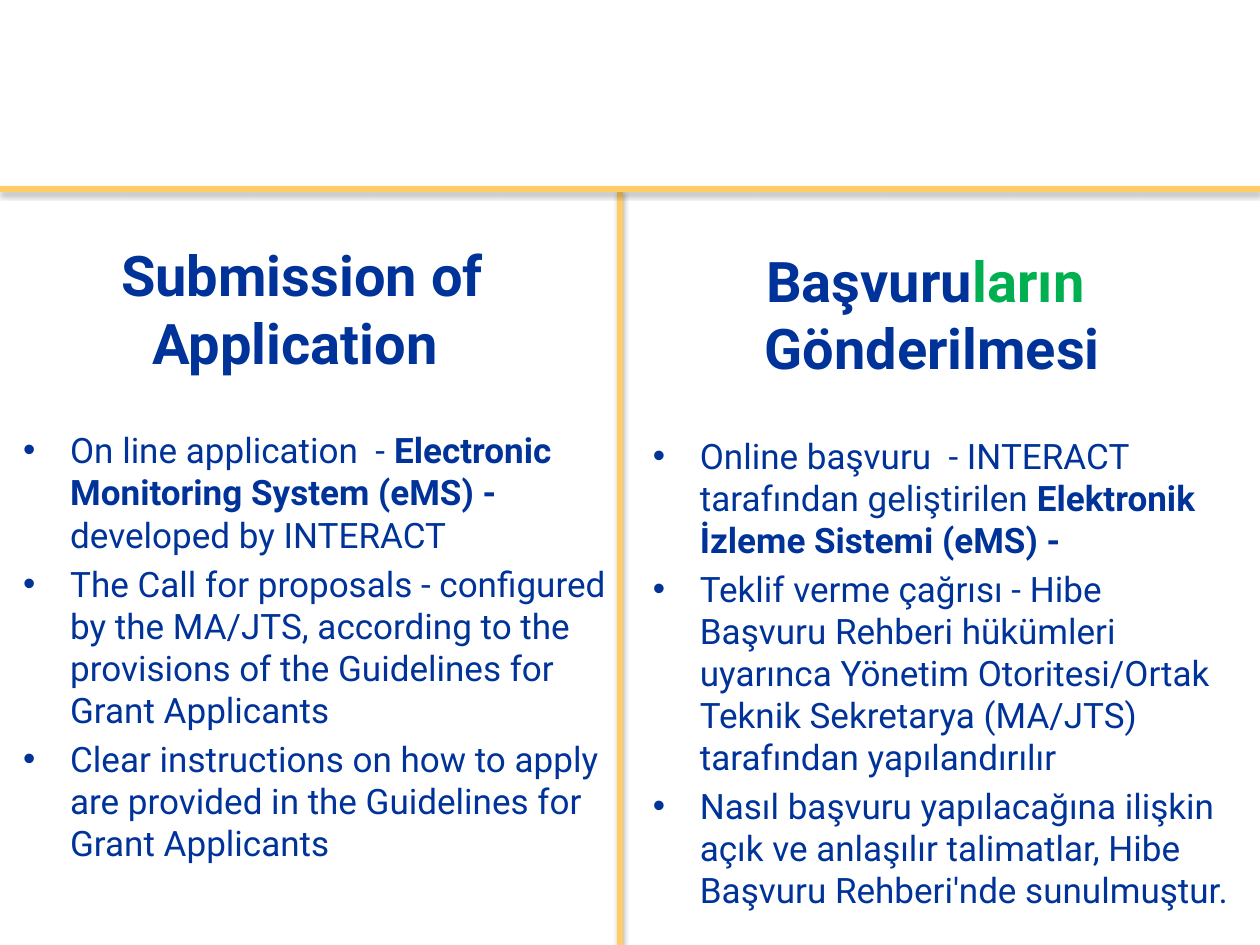
from lxml.etree import SubElement
from pptx import Presentation
from pptx.dml.color import RGBColor
from pptx.enum.shapes import MSO_CONNECTOR
from pptx.enum.text import MSO_ANCHOR, MSO_AUTO_SIZE, PP_ALIGN
from pptx.oxml.ns import qn
from pptx.util import Cm, Pt

COLORS = {"text": "003399", "accent": "00B050", "rule": "FFCC66", "shadow": "000000"}
FONT = "Roboto"
SLIDE_WIDTH, SLIDE_HEIGHT = Cm(25.4), Cm(19.05)
RULE_TOP, DIVIDER_LEFT = Cm(3.81), Cm(12.5)
COLUMN_WIDTH = Cm(12.35)

# Each run is (text, bold, color name)
ENGLISH_HEADING = [[("Submission of Application ", True, "text")]]
ENGLISH_POINTS = [
    [
        ("On line application  - ", False, "text"),
        ("Electronic Monitoring System (eMS) - ", True, "text"),
        ("developed by INTERACT", False, "text"),
    ],
    [("The Call for proposals - configured by the MA/JTS, according to the "
      "provisions of the Guidelines for Grant Applicants", False, "text")],
    [("Clear instructions on how to apply are provided in the Guidelines for "
      "Grant Applicants", False, "text")],
]
TURKISH_HEADING = [
    [("Başvuru", True, "text"), ("ların ", True, "accent")],
    [("Gönderilmesi", True, "text")],
]
TURKISH_POINTS = [
    [
        ("Online başvuru  - INTERACT tarafından geliştirilen ", False, "text"),
        ("Elektronik İzleme Sistemi (eMS) -", True, "text"),
    ],
    [("Teklif verme çağrısı - Hibe Başvuru Rehberi hükümleri uyarınca Yönetim "
      "Otoritesi/Ortak Teknik Sekretarya (MA/JTS) tarafından yapılandırılır",
      False, "text")],
    [("Nasıl başvuru yapılacağına ilişkin açık ve anlaşılır talimatlar, Hibe "
      "Başvuru Rehberi'nde sunulmuştur.", False, "text")],
]


def place(shape, left, top, width, height):
    shape.left, shape.top, shape.width, shape.height = left, top, width, height


def add_bullet(paragraph):
    properties = paragraph._p.get_or_add_pPr()
    properties.set("marL", str(Cm(0.95)))
    properties.set("indent", str(-Cm(0.95)))
    SubElement(properties, qn("a:buFont"), typeface="Arial")
    SubElement(properties, qn("a:buChar"), char="•")


def fill_text(shape, paragraphs, size, anchor, alignment, bulleted=False):
    text_frame = shape.text_frame
    text_frame.word_wrap = True
    text_frame.auto_size = MSO_AUTO_SIZE.NONE
    text_frame.vertical_anchor = anchor
    for index, runs in enumerate(paragraphs):
        paragraph = text_frame.add_paragraph() if index else text_frame.paragraphs[0]
        paragraph.alignment = alignment
        paragraph.space_before = Pt(4) if bulleted and index else Pt(0)
        if bulleted:
            add_bullet(paragraph)
        for text, bold, color in runs:
            run = paragraph.add_run()
            run.text = text
            run.font.name = FONT
            run.font.size = Pt(size)
            run.font.bold = bold
            run.font.color.rgb = RGBColor.from_string(COLORS[color])


def build_column(heading_shape, list_shape, left, top, heading, points):
    """Place a heading and its bulleted list relative to the column corner."""
    place(heading_shape, left, top, COLUMN_WIDTH, Cm(2.1))
    fill_text(heading_shape, heading, 32, MSO_ANCHOR.MIDDLE, PP_ALIGN.CENTER)
    place(list_shape, left + Cm(0.29), top + Cm(3.36), Cm(12.27), Cm(10.87))
    fill_text(list_shape, points, 20, MSO_ANCHOR.TOP, PP_ALIGN.LEFT, bulleted=True)


def add_rule(slide, start_x, start_y, end_x, end_y):
    rule = slide.shapes.add_connector(
        MSO_CONNECTOR.STRAIGHT, start_x, start_y, end_x, end_y)
    rule.line.color.rgb = RGBColor.from_string(COLORS["rule"])
    rule.line.width = Pt(3)
    # Soft shadow straight below the rule
    effects = SubElement(rule._element.spPr, qn("a:effectLst"))
    shadow = SubElement(effects, qn("a:outerShdw"), blurRad=str(Pt(3.1)),
                        dist=str(Pt(1.8)), dir="5400000", rotWithShape="0")
    color = SubElement(shadow, qn("a:srgbClr"), val=COLORS["shadow"])
    SubElement(color, qn("a:alpha"), val="35000")


def build_slide(presentation):
    slide = presentation.slides.add_slide(presentation.slide_layouts[1])
    shapes = slide.shapes

    # English column in the template's placeholders
    build_column(shapes.title, slide.placeholders[1], Cm(-0.08), Cm(5.16),
                 ENGLISH_HEADING, ENGLISH_POINTS)

    # Column divider and header rule
    add_rule(slide, DIVIDER_LEFT, RULE_TOP, DIVIDER_LEFT, SLIDE_HEIGHT)
    add_rule(slide, 0, RULE_TOP, SLIDE_WIDTH, RULE_TOP)

    # Turkish column
    heading_box, list_box = (shapes.add_textbox(0, 0, 0, 0) for _ in range(2))
    build_column(heading_box, list_box, Cm(12.62), Cm(5.28),
                 TURKISH_HEADING, TURKISH_POINTS)


def main():
    presentation = Presentation()
    presentation.slide_width = SLIDE_WIDTH
    presentation.slide_height = SLIDE_HEIGHT
    build_slide(presentation)
    presentation.save("out.pptx")


if __name__ == "__main__":
    main()
